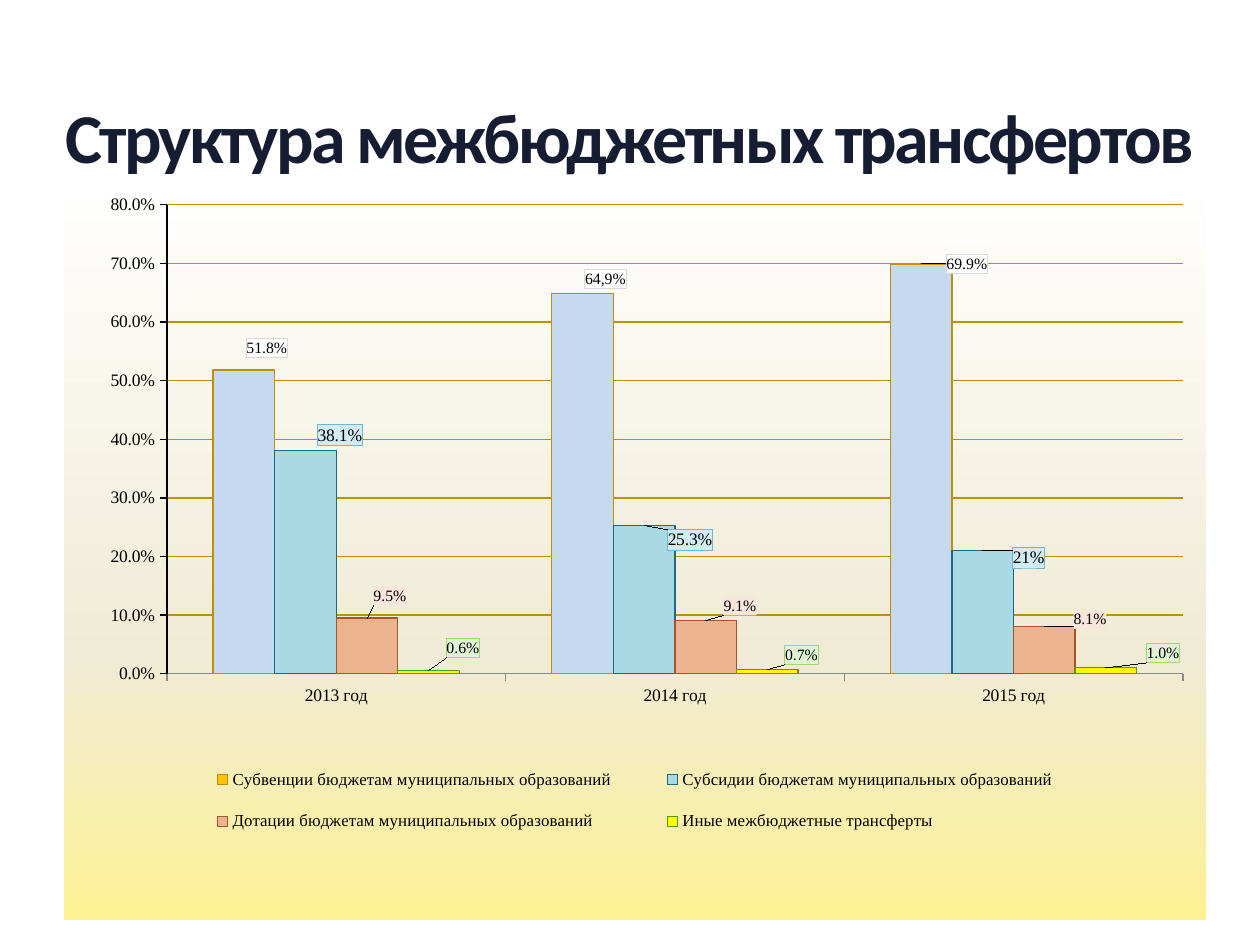
"""Build a slide charting the structure of inter-budget transfers by year."""
from dataclasses import dataclass

from lxml import etree
from pptx import Presentation
from pptx.chart.data import CategoryChartData
from pptx.dml.color import RGBColor
from pptx.enum.chart import XL_CHART_TYPE, XL_LABEL_POSITION, XL_LEGEND_POSITION, XL_TICK_MARK
from pptx.enum.text import MSO_ANCHOR, MSO_AUTO_SIZE, PP_ALIGN
from pptx.oxml import parse_xml
from pptx.oxml.ns import nsdecls, qn
from pptx.util import Pt

COLUMNS = XL_CHART_TYPE.COLUMN_CLUSTERED
OUTSIDE_END = XL_LABEL_POSITION.OUTSIDE_END
LEGEND_BOTTOM = XL_LEGEND_POSITION.BOTTOM
TICK_OUTSIDE = XL_TICK_MARK.OUTSIDE
MIDDLE = MSO_ANCHOR.MIDDLE
NO_AUTOFIT = MSO_AUTO_SIZE.NONE
CENTER = PP_ALIGN.CENTER

BLACK = RGBColor(0x00, 0x00, 0x00)
WHITE = RGBColor(0xFF, 0xFF, 0xFF)
NAVY = RGBColor(0x16, 0x1D, 0x32)
GREY = RGBColor(0x89, 0x89, 0x89)
SILVER = RGBColor(0xD9, 0xD9, 0xD9)
GOLD = RGBColor(0xFF, 0xC0, 0x00)
DARK_GOLD = RGBColor(0xBF, 0x90, 0x00)
PALE_BLUE = RGBColor(0xC5, 0xDA, 0xF1)
AQUA = RGBColor(0xA8, 0xD9, 0xE5)
TEAL = RGBColor(0x1F, 0x6A, 0x82)
ICE = RGBColor(0xD3, 0xEC, 0xF3)
SKY = RGBColor(0x6B, 0xB8, 0xD0)
PEACH = RGBColor(0xEC, 0xB3, 0x8F)
RUST = RGBColor(0xA5, 0x55, 0x2A)
BLUSH = RGBColor(0xF8, 0xE5, 0xDB)
YELLOW = RGBColor(0xFF, 0xFF, 0x00)
GREEN = RGBColor(0x4E, 0x9A, 0x1E)
MINT = RGBColor(0xE2, 0xF3, 0xD5)
LIME = RGBColor(0x9F, 0xD8, 0x73)
CREAM = RGBColor(0xF0, 0xEB, 0xD5)
LEMON = RGBColor(0xFE, 0xF1, 0x94)

SERIF = "Times New Roman"
PERCENT = "0.0%"
YEARS = ("2013 год", "2014 год", "2015 год")
BACKGROUND_STOPS = ((0, WHITE), (65, CREAM), (100, LEMON))


@dataclass(frozen=True)
class Transfer:
    """One kind of transfer with its bar and label styling."""
    name: str
    shares: tuple
    fill: RGBColor
    bar_fill: RGBColor
    line: RGBColor
    label_fill: RGBColor
    label_line: RGBColor | None
    label_size: float
    label_shifts: tuple
    custom_labels: tuple = (None, None, None)


TRANSFERS = (
    Transfer("Субвенции бюджетам муниципальных образований", (0.518, 0.648, 0.699),
             GOLD, PALE_BLUE, DARK_GOLD, WHITE, SILVER, 9,
             ((0.02, -0.01), (0.02, 0), (0.04, 0.02)), (None, "64,9%", None)),
    Transfer("Субсидии бюджетам муниципальных образований", (0.381, 0.253, 0.21),
             AQUA, AQUA, TEAL, ICE, SKY, 10,
             ((0.03, 0), (0.04, 0.04), (0.04, 0.03)), (None, None, "21%")),
    Transfer("Дотации бюджетам муниципальных образований", (0.095, 0.091, 0.081),
             PEACH, PEACH, RUST, BLUSH, None, 9,
             ((0.02, -0.01), (0.03, 0), (0.04, 0.01))),
    Transfer("Иные межбюджетные трансферты", (0.006, 0.007, 0.01),
             YELLOW, YELLOW, GREEN, MINT, LIME, 9,
             ((0.03, -0.01), (0.03, 0), (0.05, 0))),
)


def style_font(font, size: float) -> None:
    """Apply the chart typeface in black."""
    font.name = SERIF
    font.size = Pt(size)
    font.color.rgb = BLACK


def style_line(line, color: RGBColor) -> None:
    """Apply a thin solid line."""
    line.color.rgb = color
    line.width = Pt(0.75)


def make_layout(**settings) -> etree.ElementBase:
    """Return a manual layout element with the given settings."""
    layout = parse_xml(f"<c:layout {nsdecls('c')}><c:manualLayout/></c:layout>")
    for tag, value in settings.items():
        etree.SubElement(layout[0], qn(f"c:{tag}")).set("val", str(value))
    return layout


def add_title(page) -> None:
    """Place and format the title."""
    box = page.shapes.title
    box.left, box.top, box.width, box.height = Pt(8.5), Pt(55), Pt(703), Pt(51)
    frame = box.text_frame
    frame.text = "Структура межбюджетных трансфертов"
    frame.margin_left = frame.margin_right = frame.margin_top = frame.margin_bottom = 0
    frame.vertical_anchor = MIDDLE
    frame.word_wrap = True
    frame.auto_size = NO_AUTOFIT
    para = frame.paragraphs[0]
    para.alignment = CENTER
    para.line_spacing = 0.9
    span = para.runs[0]
    span.font.name = "Calibri"
    span.font.size = Pt(40)
    span.font.bold = True
    span.font.color.rgb = NAVY
    span.font._element.set("spc", "-150")


def style_label(series, index: int, transfer: Transfer) -> None:
    """Shift, fill and outline one data label."""
    label = series.points[index].data_label
    custom = transfer.custom_labels[index]
    if custom:
        label.text_frame.text = custom
        style_font(label.text_frame.paragraphs[0].runs[0].font, transfer.label_size)
    else:
        style_font(label.font, transfer.label_size)
    label.position = OUTSIDE_END
    element = series._element.xpath(f"c:dLbls/c:dLbl[c:idx/@val='{index}']")[0]
    shift_x, shift_y = transfer.label_shifts[index]
    element.find(qn("c:idx")).addnext(make_layout(x=shift_x, y=shift_y))
    outline = "<a:noFill/>"
    if transfer.label_line:
        outline = f'<a:solidFill><a:srgbClr val="{transfer.label_line}"/></a:solidFill>'
    follower = element.xpath("c:txPr | c:dLblPos")[0]
    follower.addprevious(parse_xml(
        f'<c:numFmt {nsdecls("c")} formatCode="{PERCENT}" sourceLinked="0"/>'))
    follower.addprevious(parse_xml(
        f'<c:spPr {nsdecls("c", "a")}><a:solidFill><a:srgbClr val="{transfer.label_fill}"/>'
        f'</a:solidFill><a:ln w="6350">{outline}</a:ln></c:spPr>'))


def style_series(series, transfer: Transfer) -> None:
    """Format the bars and labels of one transfer."""
    series.format.fill.solid()
    series.format.fill.fore_color.rgb = transfer.fill
    style_line(series.format.line, transfer.line)
    labels = series.data_labels
    labels.show_value = True
    labels.number_format = PERCENT
    labels.number_format_is_linked = False
    style_font(labels.font, transfer.label_size)
    for index in range(len(YEARS)):
        if transfer.bar_fill != transfer.fill:
            bar = series.points[index].format
            bar.fill.solid()
            bar.fill.fore_color.rgb = transfer.bar_fill
            style_line(bar.line, transfer.line)
        style_label(series, index, transfer)


def style_axes(chart) -> None:
    """Format both axes and the gridlines."""
    for axis, color in ((chart.category_axis, GREY), (chart.value_axis, BLACK)):
        axis.major_tick_mark = TICK_OUTSIDE
        style_font(axis.tick_labels.font, 10)
        style_line(axis.format.line, color)
    values = chart.value_axis
    values.minimum_scale, values.maximum_scale, values.major_unit = 0, 0.8, 0.1
    values.tick_labels.number_format = PERCENT
    values.tick_labels.number_format_is_linked = False
    style_line(values.major_gridlines.format.line, DARK_GOLD)


def style_areas(chart) -> None:
    """Set the gradient background and place the plot and the legend."""
    style_font(chart.font, 10)
    stops = "".join(f'<a:gs pos="{place * 1000}"><a:srgbClr val="{color}"/></a:gs>'
                    for place, color in BACKGROUND_STOPS)
    chart._chartSpace.find(qn("c:txPr")).addprevious(parse_xml(
        f'<c:spPr {nsdecls("c", "a")}><a:gradFill><a:gsLst>{stops}</a:gsLst>'
        '<a:lin ang="5400000" scaled="0"/></a:gradFill><a:ln><a:noFill/></a:ln></c:spPr>'))
    plot_area = chart._chartSpace.chart.plotArea
    for layout in plot_area.findall(qn("c:layout")):
        plot_area.remove(layout)
    plot_area.insert(0, make_layout(layoutTarget="inner", xMode="edge", yMode="edge",
                                    x=0.09, y=0.04, w=0.89, h=0.63))
    chart.has_legend = True
    legend = chart.legend
    legend.position = LEGEND_BOTTOM
    legend.include_in_layout = False
    style_font(legend.font, 9.6)
    for layout in legend._element.findall(qn("c:layout")):
        legend._element.remove(layout)
    legend._element.find(qn("c:legendPos")).addnext(make_layout(
        xMode="edge", yMode="edge", x=0.09, y=0.77, w=0.82, h=0.14))


def add_transfer_chart(page) -> None:
    """Add the clustered column chart."""
    data = CategoryChartData(number_format=PERCENT)
    data.categories = YEARS
    for transfer in TRANSFERS:
        data.add_series(transfer.name, transfer.shares)
    chart = page.shapes.add_chart(COLUMNS, Pt(36.7), Pt(100), Pt(652.3), Pt(425.5), data).chart
    chart.has_title = False
    plot = chart.plots[0]
    plot.gap_width, plot.overlap, plot.vary_by_categories = 150, 0, False
    style_areas(chart)
    style_axes(chart)
    for series, transfer in zip(plot.series, TRANSFERS):
        style_series(series, transfer)


def main() -> None:
    """Create and save the deck."""
    deck = Presentation()
    deck.slide_width, deck.slide_height = Pt(720), Pt(540)
    page = deck.slides.add_slide(deck.slide_layouts[5])
    add_title(page)
    add_transfer_chart(page)
    deck.save("out.pptx")


if __name__ == "__main__":
    main()
